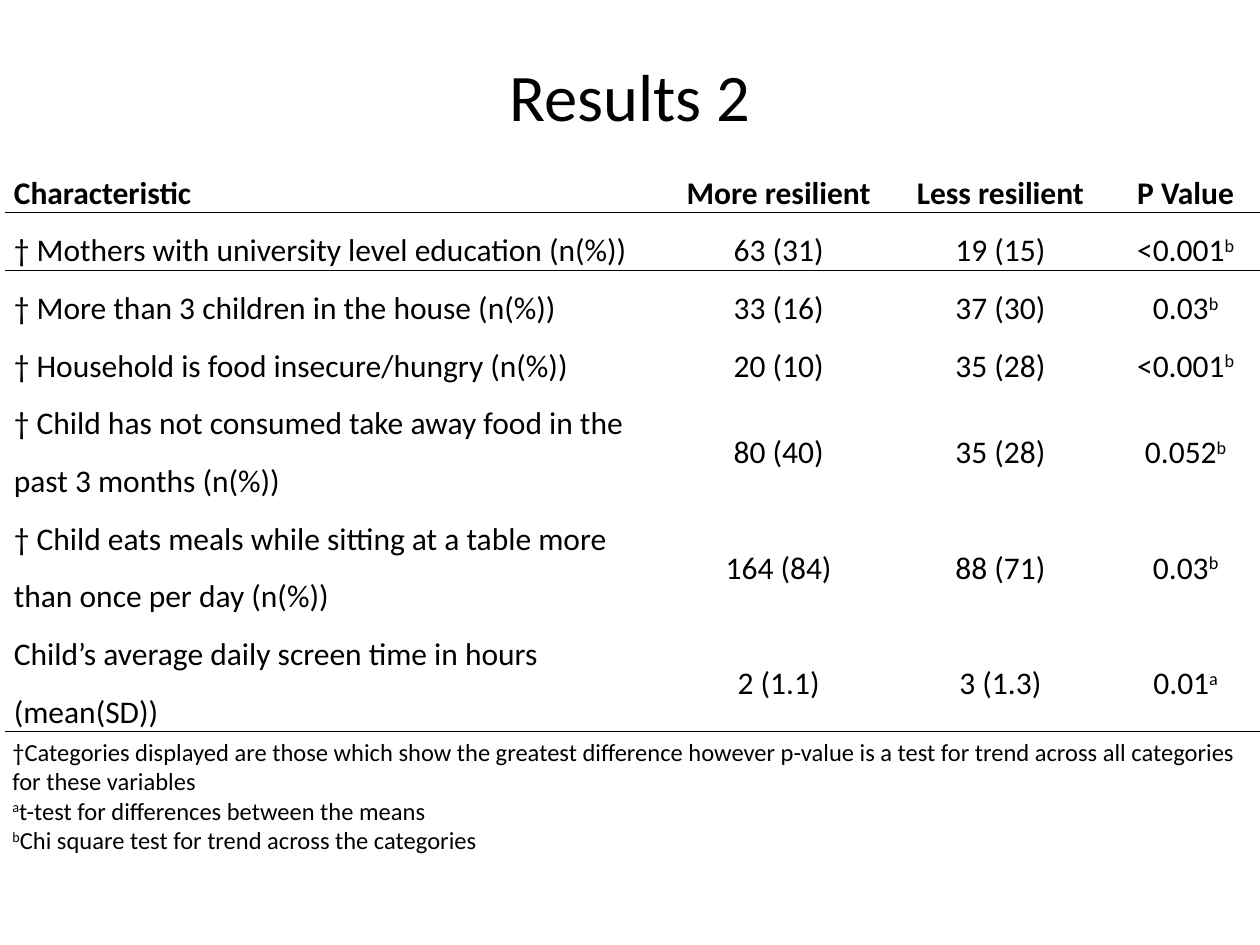
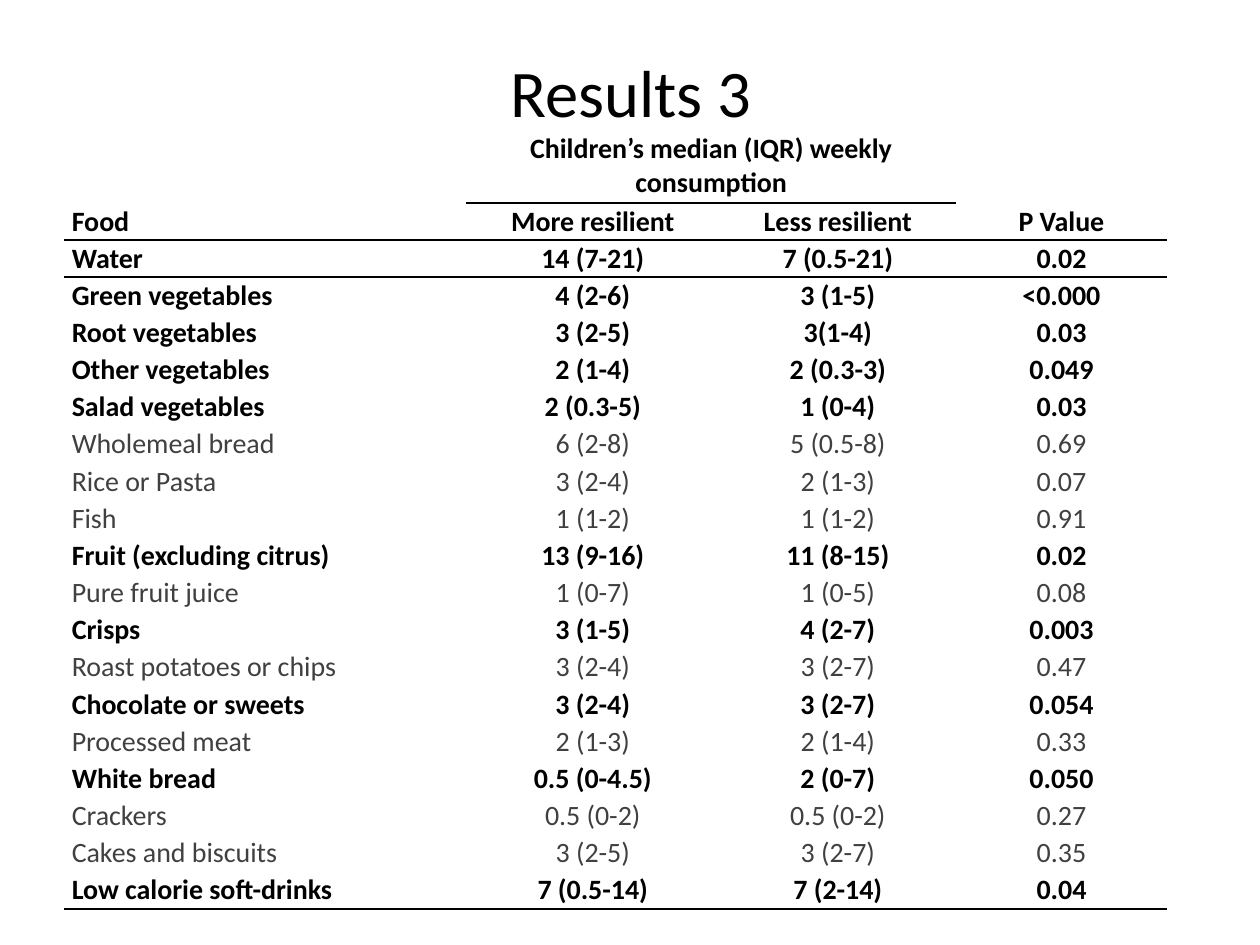
from dataclasses import dataclass, field
from itertools import product
from typing import NamedTuple

from lxml import etree
from pptx import Presentation
from pptx import util as u
from pptx.dml import color
from pptx.enum import text
from pptx.oxml import ns

EMU_PER_PX = 4572
PLAIN_STYLE = "{2D5ABB26-0587-4C30-8999-92F81FD0307C}"
TITLE_ONLY = 5
SLIDE_WIDTH, SLIDE_HEIGHT = 2000, 1500


@dataclass(frozen=True)
class Theme:
    font: str = "Calibri"
    ink: str = "000000"
    muted: str = "404040"
    title: int = 38
    results: int = 18
    foods: int = 16
    note: int = 14
    rule: int = 1


THEME = Theme()


class Box(NamedTuple):
    left: int
    top: int
    width: int
    height: int


class Look(NamedTuple):
    size: int
    bold: bool = False
    ink: str = THEME.ink


class Row(NamedTuple):
    cells: tuple[str, ...]
    look: Look
    height: int
    mark: str = ""


class Note(NamedTuple):
    mark: str
    words: str


@dataclass(frozen=True)
class Grid:
    left: int
    top: int
    columns: tuple[int, ...]
    rows: list[Row]
    inset: int
    spacing: float
    header_row: int
    lead_anchor: text.MSO_ANCHOR
    merged: dict[int, tuple[int, int]] = field(default_factory=dict)

    def is_ruled(self, row: int, column: int) -> bool:
        if row in self.merged:
            first, last = self.merged[row]
            return first <= column <= last
        return row in (self.header_row, len(self.rows) - 1)


def px(length: int) -> u.Emu:
    return u.Emu(length * EMU_PER_PX)


def add_span(para, words: str, look: Look, raised: bool = False) -> None:
    span = para.add_run()
    span.text = words
    span.font.name = THEME.font
    span.font.size = u.Pt(look.size)
    span.font.bold = look.bold
    span.font.color.rgb = color.RGBColor.from_string(look.ink)
    if raised:
        span.font._element.set("baseline", "30000")


def add_titled_page(deck, words: str, box: Box):
    page = deck.slides.add_slide(deck.slide_layouts[TITLE_ONLY])
    title = page.shapes.title
    title.left, title.top, title.width, title.height = map(px, box)
    frame = title.text_frame
    frame.auto_size = text.MSO_AUTO_SIZE.NONE
    frame.vertical_anchor = text.MSO_ANCHOR.MIDDLE
    para = frame.paragraphs[0]
    para.alignment = text.PP_ALIGN.CENTER
    add_span(para, words, Look(THEME.title))
    return page


def add_rule(cell, edge: str) -> None:
    properties = cell._tc.get_or_add_tcPr()
    line = etree.SubElement(properties, ns.qn(f"a:{edge}"), w=str(u.Pt(THEME.rule)))
    fill = etree.SubElement(line, ns.qn("a:solidFill"))
    etree.SubElement(fill, ns.qn("a:srgbClr"), val=THEME.ink)


def format_cell(cell, grid: Grid, row_index: int, column_index: int) -> None:
    row = grid.rows[row_index]
    cell.margin_left = cell.margin_right = px(grid.inset)
    cell.margin_top = cell.margin_bottom = 0
    leads = column_index == 0 or row_index == grid.header_row
    cell.vertical_anchor = grid.lead_anchor if leads else text.MSO_ANCHOR.MIDDLE
    if row_index and grid.is_ruled(row_index - 1, column_index):
        add_rule(cell, "lnT")
    if grid.is_ruled(row_index, column_index):
        add_rule(cell, "lnB")
    cell.fill.background()

    words = row.cells[column_index]
    if not words:
        return
    para = cell.text_frame.paragraphs[0]
    para.line_spacing = grid.spacing
    para.alignment = text.PP_ALIGN.CENTER if column_index else text.PP_ALIGN.LEFT
    add_span(para, words, row.look)
    if row.mark and column_index == len(row.cells) - 1:
        add_span(para, row.mark, row.look, raised=True)


def add_grid(page, grid: Grid) -> None:
    width, height = sum(grid.columns), sum(row.height for row in grid.rows)
    frame = page.shapes.add_table(
        len(grid.rows), len(grid.columns),
        px(grid.left), px(grid.top), px(width), px(height),
    )
    table = frame.table
    table.first_row = table.horz_banding = False
    table._tbl.tblPr.find(ns.qn("a:tableStyleId")).text = PLAIN_STYLE
    for column, column_width in zip(table.columns, grid.columns):
        column.width = px(column_width)
    for table_row, row in zip(table.rows, grid.rows):
        table_row.height = px(row.height)
    for row_index, (first, last) in grid.merged.items():
        table.cell(row_index, first).merge(table.cell(row_index, last))
    for row_index, column_index in product(range(len(grid.rows)), range(len(grid.columns))):
        format_cell(table.cell(row_index, column_index), grid, row_index, column_index)


def add_notes(page, box: Box, notes: list[Note]) -> None:
    frame = page.shapes.add_textbox(*map(px, box)).text_frame
    frame.word_wrap = True
    frame.auto_size = text.MSO_AUTO_SIZE.SHAPE_TO_FIT_TEXT
    para = frame.paragraphs[0]
    look = Look(THEME.note)
    for index, note in enumerate(notes):
        if index:
            para.add_line_break()
        if note.mark:
            add_span(para, note.mark, look, raised=True)
        add_span(para, note.words, look)


def characteristics_grid() -> Grid:
    heading = Look(THEME.results, bold=True)
    body = Look(THEME.results)
    single, double = 80, 158
    return Grid(
        left=8, top=246, columns=(1052, 352, 352, 236),
        inset=14, spacing=1.5, header_row=0, lead_anchor=text.MSO_ANCHOR.TOP,
        rows=[
            Row(("Characteristic", "More resilient", "Less resilient", "P Value"), heading, single),
            Row(("† Mothers with university level education (n(%))",
                 "63 (31)", "19 (15)", "<0.001"), body, single, "b"),
            Row(("† More than 3 children in the house (n(%))",
                 "33 (16)", "37 (30)", "0.03"), body, single, "b"),
            Row(("† Household is food insecure/hungry (n(%))",
                 "20 (10)", "35 (28)", "<0.001"), body, single, "b"),
            Row(("† Child has not consumed take away food in the past 3 months (n(%))",
                 "80 (40)", "35 (28)", "0.052"), body, double, "b"),
            Row(("† Child eats meals while sitting at a table more than once per day (n(%))",
                 "164 (84)", "88 (71)", "0.03"), body, double, "b"),
            Row(("Child’s average daily screen time in hours (mean(SD))",
                 "2 (1.1)", "3 (1.3)", "0.01"), body, double, "a"),
        ],
    )


def foods_grid() -> Grid:
    strong = Look(THEME.foods, bold=True)
    quiet = Look(THEME.foods, ink=THEME.muted)
    line_height = 59
    foods = [
        (strong, "Food", "More resilient", "Less resilient", "P Value"),
        (strong, "Water", "14 (7-21)", "7 (0.5-21)", "0.02"),
        (strong, "Green vegetables", "4 (2-6)", "3 (1-5)", "<0.000"),
        (strong, "Root vegetables", "3 (2-5)", "3(1-4)", "0.03"),
        (strong, "Other vegetables", "2 (1-4)", "2 (0.3-3)", "0.049"),
        (strong, "Salad vegetables", "2 (0.3-5)", "1 (0-4)", "0.03"),
        (quiet, "Wholemeal bread", "6 (2-8)", "5 (0.5-8)", "0.69"),
        (quiet, "Rice or Pasta", "3 (2-4)", "2 (1-3)", "0.07"),
        (quiet, "Fish", "1 (1-2)", "1 (1-2)", "0.91"),
        (strong, "Fruit (excluding citrus)", "13 (9-16)", "11 (8-15)", "0.02"),
        (quiet, "Pure fruit juice", "1 (0-7)", "1 (0-5)", "0.08"),
        (strong, "Crisps", "3 (1-5)", "4 (2-7)", "0.003"),
        (quiet, "Roast potatoes or chips", "3 (2-4)", "3 (2-7)", "0.47"),
        (strong, "Chocolate or sweets", "3 (2-4)", "3 (2-7)", "0.054"),
        (quiet, "Processed meat", "2 (1-3)", "2 (1-4)", "0.33"),
        (strong, "White bread", "0.5 (0-4.5)", "2 (0-7)", "0.050"),
        (quiet, "Crackers", "0.5 (0-2)", "0.5 (0-2)", "0.27"),
        (quiet, "Cakes and biscuits", "3 (2-5)", "3 (2-7)", "0.35"),
        (strong, "Low calorie soft-drinks", "7 (0.5-14)", "7 (2-14)", "0.04"),
    ]
    spanning = Row(
        ("", "Children’s median (IQR) weekly consumption", "", ""), strong, 2 * line_height
    )
    return Grid(
        left=102, top=204, columns=(638, 402, 376, 334),
        inset=12, spacing=1.0, header_row=1, lead_anchor=text.MSO_ANCHOR.MIDDLE,
        merged={0: (1, 2)},
        rows=[spanning] + [Row(tuple(cells), look, line_height) for look, *cells in foods],
    )


def main() -> None:
    deck = Presentation()
    deck.slide_width, deck.slide_height = px(SLIDE_WIDTH), px(SLIDE_HEIGHT)

    page = add_titled_page(deck, "Results 2", Box(100, 26, 1800, 250))
    add_grid(page, characteristics_grid())
    add_notes(page, Box(0, 1160, SLIDE_WIDTH, 208), [
        Note("", "†Categories displayed are those which show the greatest difference however "
                 "p-value is a test for trend across all categories for these variables"),
        Note("a", "t-test for differences between the means"),
        Note("b", "Chi square test for trend across the categories"),
    ])

    page = add_titled_page(deck, "Results 3", Box(102, 42, 1800, 204))
    add_grid(page, foods_grid())

    deck.save("out.pptx")


if __name__ == "__main__":
    main()
